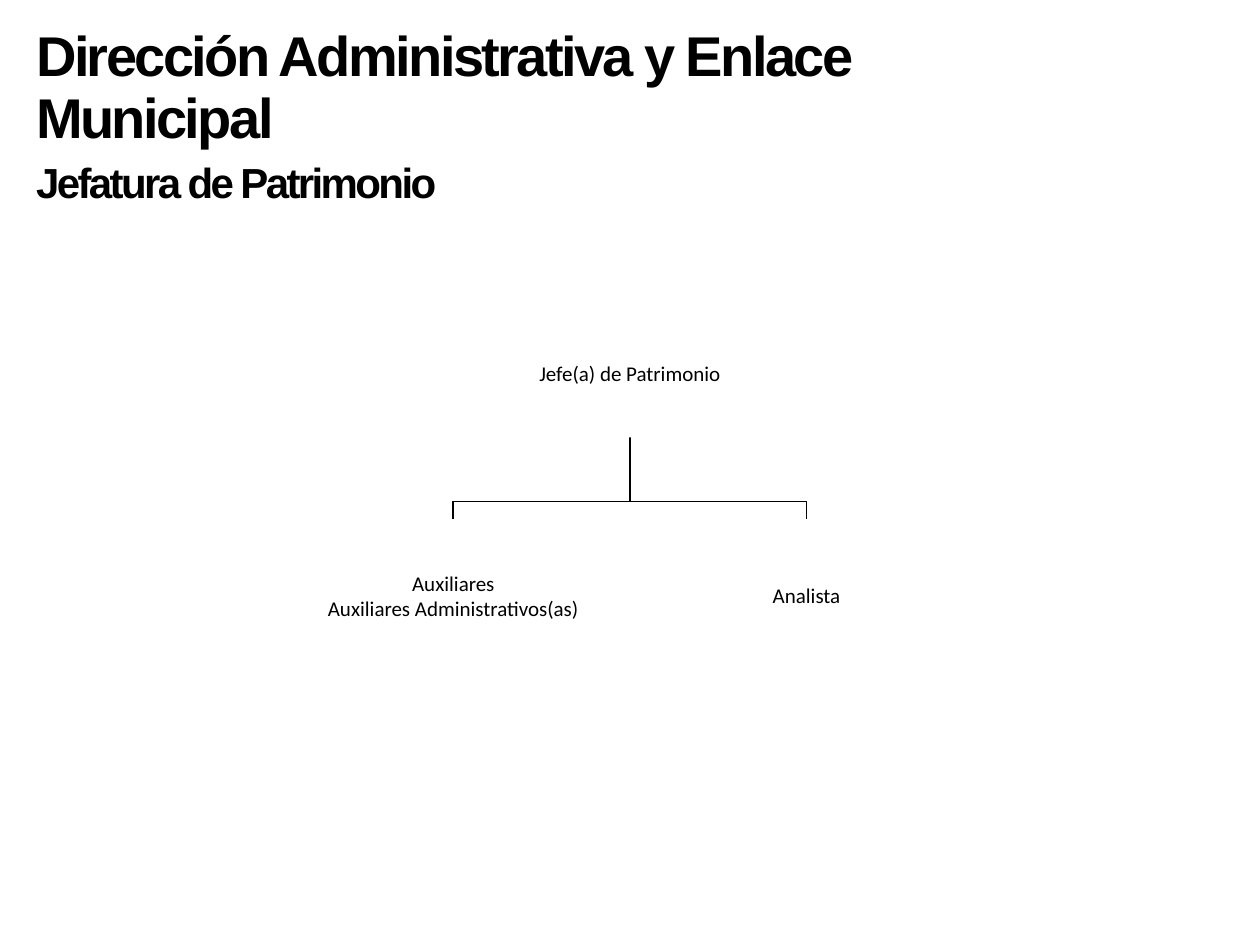
from pptx import Presentation
from pptx.dml.color import RGBColor
from pptx.enum.shapes import MSO_SHAPE
from pptx.enum.text import MSO_ANCHOR, PP_ALIGN
from pptx.util import Cm, Pt

RECTANGLE = MSO_SHAPE.RECTANGLE
MIDDLE = MSO_ANCHOR.MIDDLE
CENTER = PP_ALIGN.CENTER
COLORS = {"ink": "000000", "paper": "FFFFFF"}

TITLE = {"name": "Arial", "size": Pt(32), "bold": True}
SUBTITLE = {"name": "Arial", "size": Pt(24), "bold": True}
POSITION = {"name": "Calibri", "size": Pt(12)}


def color(key):
    return RGBColor.from_string(COLORS[key])


def set_attributes(target, values):
    for name, value in values.items():
        setattr(target, name, value)


def add_run(paragraph, text, font_format):
    run = paragraph.add_run()
    run.text = text
    set_attributes(run.font, font_format)
    run.font.color.rgb = color("ink")
    return run


def add_heading(slide, left, top, width, height):
    """Title and subtitle with tightened letters."""
    frame = slide.shapes.add_textbox(Cm(left), Cm(top), Cm(width), Cm(height)).text_frame
    frame.word_wrap = True
    title, subtitle = frame.paragraphs[0], frame.add_paragraph()
    title.line_spacing = 0.93
    subtitle.space_before = Pt(3)
    for paragraph, text, font_format in (
        (title, "Dirección Administrativa y Enlace Municipal", TITLE),
        (subtitle, "Jefatura de Patrimonio", SUBTITLE),
    ):
        run = add_run(paragraph, text, font_format)
        run.font._element.set("spc", "-150")


def add_position(slide, left, top, width, height, lines):
    """One post of the chart: a plain box with centred lines."""
    box = slide.shapes.add_shape(RECTANGLE, Cm(left), Cm(top), Cm(width), Cm(height))
    box.shadow.inherit = False
    box.fill.solid()
    box.fill.fore_color.rgb = color("paper")
    box.line.fill.background()
    frame = box.text_frame
    margins = dict.fromkeys(
        ("margin_left", "margin_top", "margin_right", "margin_bottom"), Cm(0.03)
    )
    set_attributes(frame, {"word_wrap": True, "vertical_anchor": MIDDLE, **margins})
    for index, text in enumerate(lines):
        paragraph = frame.add_paragraph() if index else frame.paragraphs[0]
        paragraph.alignment = CENTER
        add_run(paragraph, text, POSITION)


def add_branch(slide, start, end, bend):
    """Elbow line that runs down, across at the bend, and down again."""
    (start_x, start_y), (end_x, end_y) = start, end
    points = [(start_x, bend), (end_x, bend), (end_x, end_y)]
    builder = slide.shapes.build_freeform(Cm(start_x), Cm(start_y), scale=1.0)
    builder.add_line_segments([(Cm(x), Cm(y)) for x, y in points], close=False)
    branch = builder.convert_to_shape()
    branch.shadow.inherit = False
    branch.fill.background()
    branch.line.color.rgb = color("ink")
    branch.line.width = Pt(1)


def add_organization_chart(slide, left, top, width, height):
    """Head above a row of equal posts, joined by elbow lines."""
    staff = [["Auxiliares", "Auxiliares Administrativos(as)"], ["Analista"]]
    box_width, head_height, staff_height = 6.4, 2.58, 3.07
    center = left + width / 2
    head_bottom = top + head_height
    staff_top = top + height - staff_height
    step = (width - box_width) / (len(staff) - 1)
    staff_lefts = [left + index * step for index in range(len(staff))]

    # Connecting lines
    for staff_left in staff_lefts:
        add_branch(slide, (center, head_bottom),
                   (staff_left + box_width / 2, staff_top), staff_top - 0.36)

    # Posts
    add_position(slide, center - box_width / 2, top, box_width, head_height,
                 ["Jefe(a) de Patrimonio"])
    for staff_left, lines in zip(staff_lefts, staff):
        add_position(slide, staff_left, staff_top, box_width, staff_height, lines)


def main():
    presentation = Presentation()
    presentation.slide_width, presentation.slide_height = Cm(25.4), Cm(19.05)
    slide = presentation.slides.add_slide(presentation.slide_layouts[6])
    add_heading(slide, 0.48, 0.41, 18.95, 3.73)
    add_organization_chart(slide, 5.94, 6.24, 13.52, 7.3)
    presentation.save("out.pptx")


if __name__ == "__main__":
    main()
